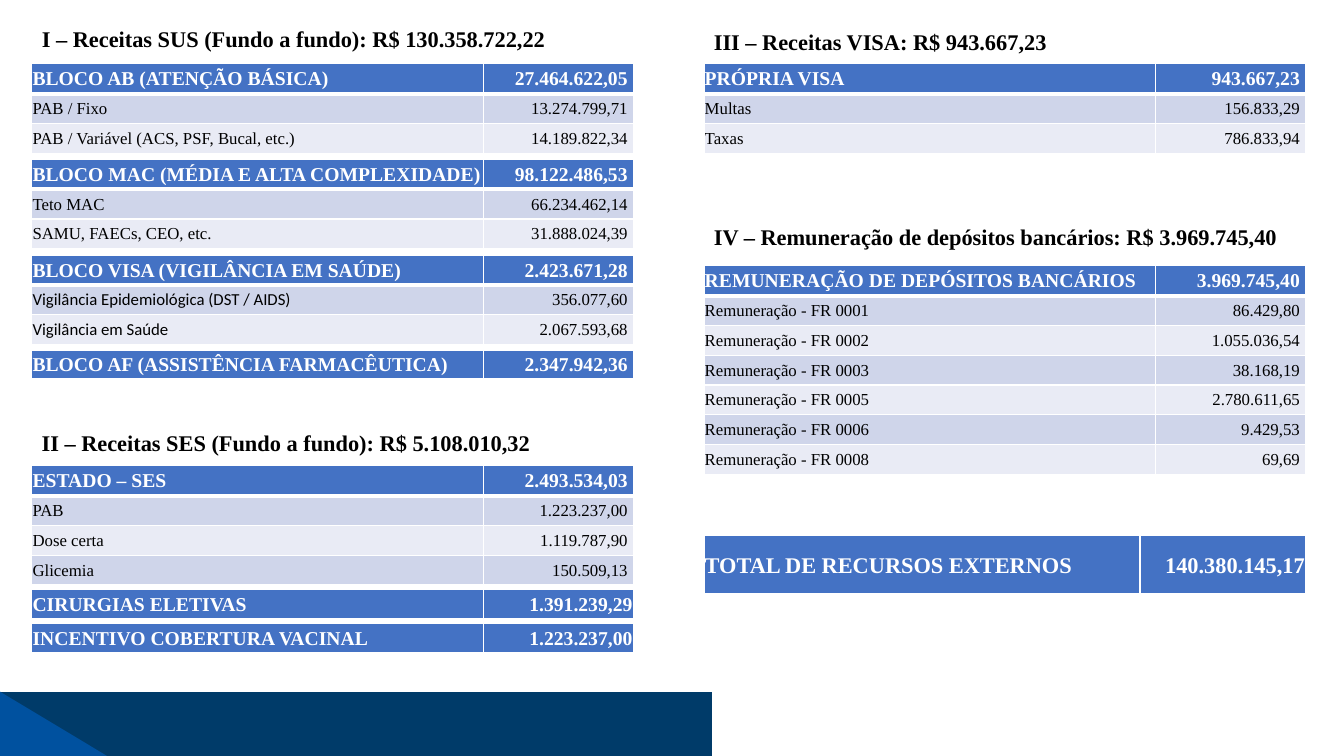
from dataclasses import dataclass

from lxml.etree import SubElement
from pptx import Presentation
from pptx.dml.color import RGBColor
from pptx.enum.shapes import MSO_SHAPE
from pptx.enum.text import MSO_ANCHOR, MSO_AUTO_SIZE, PP_ALIGN
from pptx.oxml.ns import qn
from pptx.slide import Slide
from pptx.util import Cm, Pt

SERIF = "Times New Roman"
LEFT, RIGHT = 0.8, 17.74
WIDTH = 15.16
HEADER_FILL = "4472C4"
BAND_FILLS = ("CFD5EA", "E9EBF5")
INSET, VALUE_INSET = 0.02, 0.14


@dataclass
class Heading:
    """A section heading with its position in centimetres."""
    text: str
    left: float
    top: float
    height: float = 0.94


@dataclass
class Block:
    """A revenue table whose first row is its header."""
    left: float
    top: float
    rows: list[tuple[str, str]]
    value_inset: float = VALUE_INSET
    value_width: float = 3.78
    row_height: float = 0.75
    header_size: int = 14
    label_font: str = SERIF


@dataclass
class Decoration:
    """A coloured shape at the foot of the slide."""
    kind: MSO_SHAPE
    top: float
    width: float
    colour: str


TITLE = Heading("I – Receitas SUS (Fundo a fundo): R$ 130.358.722,22", LEFT, 0.6, 0.84)
HEADINGS = [
    Heading("II – Receitas SES (Fundo a fundo): R$ 5.108.010,32", LEFT, 10.7),
    Heading("III – Receitas VISA: R$ 943.667,23", RIGHT, 0.58),
    Heading("IV – Remuneração de depósitos bancários: R$ 3.969.745,40", RIGHT, 5.51),
]
BLOCKS = [
    Block(LEFT, 1.61, [
        ("BLOCO AB (ATENÇÃO BÁSICA)", "27.464.622,05"),
        ("PAB / Fixo", "13.274.799,71"),
        ("PAB / Variável (ACS, PSF, Bucal, etc.)", "14.189.822,34"),
    ]),
    Block(LEFT, 4.02, [
        ("BLOCO MAC (MÉDIA E ALTA COMPLEXIDADE)", "98.122.486,53"),
        ("Teto MAC", "66.234.462,14"),
        ("SAMU, FAECs, CEO, etc.", "31.888.024,39"),
    ]),
    Block(LEFT, 6.43, [
        ("BLOCO VISA (VIGILÂNCIA EM SAÚDE)", "2.423.671,28"),
        ("Vigilância Epidemiológica (DST / AIDS)", "356.077,60"),
        ("Vigilância em Saúde", "2.067.593,68"),
    ], label_font="Calibri"),
    Block(LEFT, 8.82, [("BLOCO AF (ASSISTÊNCIA FARMACÊUTICA)", "2.347.942,36")]),
    Block(LEFT, 11.74, [
        ("ESTADO – SES", "2.493.534,03"),
        ("PAB", "1.223.237,00"),
        ("Dose certa", "1.119.787,90"),
        ("Glicemia", "150.509,13"),
    ]),
    Block(LEFT, 14.86, [("CIRURGIAS ELETIVAS", "1.391.239,29")], INSET),
    Block(LEFT, 15.72, [("INCENTIVO COBERTURA VACINAL", "1.223.237,00")], INSET),
    Block(RIGHT, 1.61, [
        ("PRÓPRIA VISA", "943.667,23"),
        ("Multas", "156.833,29"),
        ("Taxas", "786.833,94"),
    ]),
    Block(RIGHT, 6.7, [
        ("REMUNERAÇÃO DE DEPÓSITOS BANCÁRIOS", "3.969.745,40"),
        ("Remuneração - FR 0001", "86.429,80"),
        ("Remuneração - FR 0002", "1.055.036,54"),
        ("Remuneração - FR 0003", "38.168,19"),
        ("Remuneração - FR 0005", "2.780.611,65"),
        ("Remuneração - FR 0006", "9.429,53"),
        ("Remuneração - FR 0008", "69,69"),
    ]),
    Block(RIGHT, 13.49, [("TOTAL DE RECURSOS EXTERNOS", "140.380.145,17")],
          INSET, value_width=4.17, row_height=1.5, header_size=16),
]
DECORATIONS = [
    Decoration(MSO_SHAPE.RECTANGLE, 17.44, 17.94, "003B69"),
    Decoration(MSO_SHAPE.RIGHT_TRIANGLE, 17.43, 2.7, "00519F"),
]


def rgb(colour: str) -> RGBColor:
    """Turn a hex string into a colour."""
    return RGBColor.from_string(colour)


def format_text(p, size: int, colour: str, bold: bool, font: str = SERIF) -> None:
    """Format every run of a paragraph."""
    for r in p.runs:
        r.font.name = font
        r.font.size = Pt(size)
        r.font.bold = bold
        r.font.color.rgb = rgb(colour)


def fill_heading(sp, heading: Heading) -> None:
    """Place a heading shape and write its text."""
    sp.left, sp.top = Cm(heading.left), Cm(heading.top)
    sp.width, sp.height = Cm(WIDTH), Cm(heading.height)
    tf = sp.text_frame
    tf.text = heading.text
    tf.word_wrap = True
    tf.auto_size = MSO_AUTO_SIZE.NONE
    p = tf.paragraphs[0]
    p.alignment = PP_ALIGN.LEFT
    format_text(p, 16, "000000", True)


def set_borders(cell, top: int, bottom: int) -> None:
    """Give a cell white borders with the given top and bottom widths."""
    for side, width in (("L", 1), ("R", 1), ("T", top), ("B", bottom)):
        ln = SubElement(cell._tc.get_or_add_tcPr(), qn(f"a:ln{side}"), w=str(Pt(width)))
        SubElement(SubElement(ln, qn("a:solidFill")), qn("a:srgbClr"), val="FFFFFF")


def add_block(s: Slide, block: Block) -> None:
    """Draw one revenue table."""
    count = len(block.rows)
    table = s.shapes.add_table(count, 2, Cm(block.left), Cm(block.top), Cm(WIDTH),
                               Cm(block.row_height * count)).table
    table.columns[0].width = Cm(WIDTH - block.value_width)
    table.columns[1].width = Cm(block.value_width)
    for i, row in enumerate(block.rows):
        header = i == 0
        for j, text in enumerate(row):
            cell = table.cell(i, j)
            set_borders(cell, 3 if i == 1 else 1, 3 if header else 1)
            cell.fill.solid()
            cell.fill.fore_color.rgb = rgb(HEADER_FILL if header else BAND_FILLS[(i - 1) % 2])
            cell.margin_left = cell.margin_top = Cm(INSET)
            cell.margin_right = Cm(block.value_inset if j else INSET)
            cell.margin_bottom = 0
            cell.vertical_anchor = MSO_ANCHOR.MIDDLE
            cell.text_frame.text = text
            p = cell.text_frame.paragraphs[0]
            p.alignment = PP_ALIGN.RIGHT if j else PP_ALIGN.LEFT
            if header:
                format_text(p, block.header_size, "FFFFFF", True)
            else:
                format_text(p, 12, "000000", False, SERIF if j else block.label_font)


def add_decoration(s: Slide, decoration: Decoration) -> None:
    """Draw one shape of the footer."""
    sp = s.shapes.add_shape(decoration.kind, 0, Cm(decoration.top),
                            Cm(decoration.width), Cm(1.62))
    sp.shadow.inherit = False
    sp.fill.solid()
    sp.fill.fore_color.rgb = rgb(decoration.colour)
    sp.line.fill.background()


def main() -> None:
    """Build the slide and save it."""
    prs = Presentation()
    prs.slide_width, prs.slide_height = Cm(33.87), Cm(19.05)
    s = prs.slides.add_slide(prs.slide_layouts[5])
    for decoration in DECORATIONS:
        add_decoration(s, decoration)
    title = s.shapes.title
    fill_heading(title, TITLE)
    title.text_frame.vertical_anchor = MSO_ANCHOR.MIDDLE
    title.text_frame.paragraphs[0].line_spacing = 0.9
    for heading in HEADINGS:
        fill_heading(s.shapes.add_textbox(0, 0, 0, 0), heading)
    for block in BLOCKS:
        add_block(s, block)
    prs.save("out.pptx")


if __name__ == "__main__":
    main()
